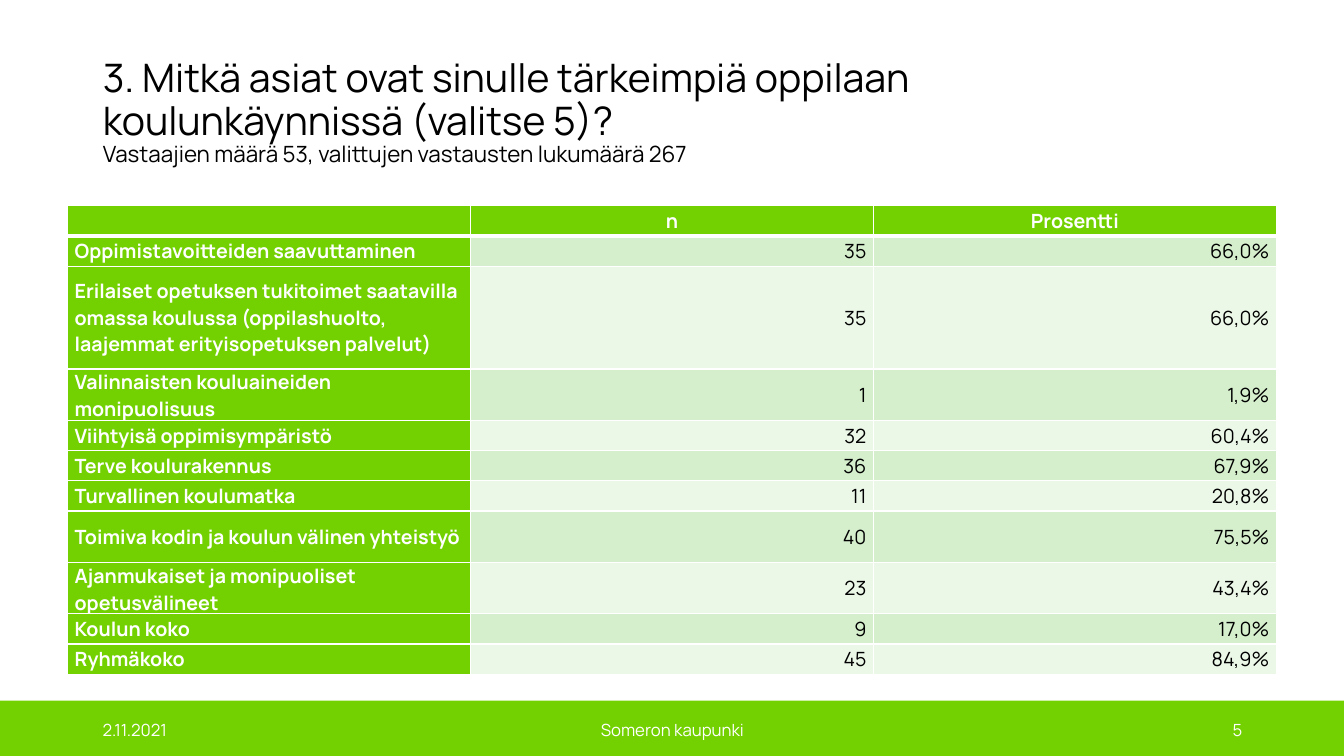
from lxml import etree
from pptx import Presentation
from pptx.dml.color import RGBColor
from pptx.enum import shapes, text
from pptx.oxml.ns import qn
from pptx.util import Inches, Pt

FONT = "Manrope"
GREEN = RGBColor(0x73, 0xD1, 0x01)
DARK_BAND = RGBColor(0xD5, 0xEE, 0xCC)
LIGHT_BAND = RGBColor(0xEB, 0xF7, 0xE7)
WHITE = RGBColor(0xFF, 0xFF, 0xFF)
BLACK = RGBColor(0, 0, 0)
LEFT, CENTER, RIGHT = text.PP_ALIGN.LEFT, text.PP_ALIGN.CENTER, text.PP_ALIGN.RIGHT

# Row height, label, count, share
ROWS = [
    (0.3, "", "n", "Prosentti"),
    (0.3, "Oppimistavoitteiden saavuttaminen", "35", "66,0%"),
    (1.02, "Erilaiset opetuksen tukitoimet saatavilla omassa koulussa "
           "(oppilashuolto, laajemmat erityisopetuksen palvelut)", "35", "66,0%"),
    (0.51, "Valinnaisten kouluaineiden monipuolisuus", "1", "1,9%"),
    (0.3, "Viihtyisä oppimisympäristö", "32", "60,4%"),
    (0.3, "Terve koulurakennus", "36", "67,9%"),
    (0.3, "Turvallinen koulumatka", "11", "20,8%"),
    (0.51, "Toimiva kodin ja koulun välinen yhteistyö", "40", "75,5%"),
    (0.51, "Ajanmukaiset ja monipuoliset opetusvälineet", "23", "43,4%"),
    (0.3, "Koulun koko", "9", "17,0%"),
    (0.3, "Ryhmäkoko", "45", "84,9%"),
]


def add_run(p, words, size, color, bold=False):
    r = p.add_run()
    r.text = words
    r.font.name, r.font.size, r.font.bold = FONT, Pt(size), bold
    r.font.color.rgb = color


def add_title(s):
    sp = s.shapes.title
    sp.left, sp.top, sp.width, sp.height = (Inches(v) for v in (0.92, 0.4, 9.9, 1.45))
    tf = sp.text_frame
    tf.word_wrap = True
    tf.auto_size = text.MSO_AUTO_SIZE.NONE
    tf.vertical_anchor = text.MSO_ANCHOR.MIDDLE
    p = tf.paragraphs[0]
    p.alignment, p.line_spacing = LEFT, 0.9
    add_run(p, "3. Mitkä asiat ovat sinulle tärkeimpiä oppilaan "
               "koulunkäynnissä (valitse 5)?", 28, BLACK)
    p.add_line_break()
    etree.SubElement(p._p[-1], qn("a:rPr"), sz="2800")
    add_run(p, "Vastaajien määrä 53, valittujen vastausten lukumäärä 267", 16, BLACK)


def add_footer_bar(s):
    sp = s.shapes.add_shape(shapes.MSO_SHAPE.RECTANGLE, 0, Inches(6.95),
                            Inches(13.33), Inches(0.55))
    sp.shadow.inherit = False
    sp.fill.solid()
    sp.fill.fore_color.rgb = GREEN
    sp.line.fill.background()


def add_footer_text(s, left, width, words, align):
    sp = s.shapes.add_textbox(Inches(left), Inches(7.04), Inches(width), Inches(0.4))
    tf = sp.text_frame
    tf.word_wrap = True
    tf.vertical_anchor = text.MSO_ANCHOR.MIDDLE
    p = tf.paragraphs[0]
    p.alignment = align
    add_run(p, words, 12, WHITE)


def set_borders(cell, top, bottom):
    """Draw white borders; top and bottom are widths in points."""
    tcPr = cell._tc.get_or_add_tcPr()
    for side, width in (("L", 1), ("R", 1), ("T", top), ("B", bottom)):
        ln = etree.SubElement(tcPr, qn(f"a:ln{side}"), w=str(Pt(width)))
        fill = etree.SubElement(ln, qn("a:solidFill"))
        etree.SubElement(fill, qn("a:srgbClr"), val=str(WHITE))


def fill_cell(cell, words, fill, color, bold, align):
    cell.margin_left = cell.margin_right = Inches(0.07)
    cell.margin_top = cell.margin_bottom = 0
    cell.vertical_anchor = text.MSO_ANCHOR.MIDDLE
    cell.fill.solid()
    cell.fill.fore_color.rgb = fill
    p = cell.text_frame.paragraphs[0]
    p.alignment = align
    if words:
        add_run(p, words, 14, color, bold)
    else:
        etree.SubElement(p._p, qn("a:endParaRPr"), sz="1400")


def add_answer_table(s):
    heights = [Inches(row[0]) for row in ROWS]
    table = s.shapes.add_table(len(ROWS), 3, Inches(0.67), Inches(2.04),
                               Inches(11.99), sum(heights)).table
    for i, (_, *words) in enumerate(ROWS):
        table.rows[i].height = heights[i]
        for j, word in enumerate(words):
            cell = table.cell(i, j)
            set_borders(cell, 3 if i == 1 else 1, 3 if i == 0 else 1)
            if i == 0:
                fill_cell(cell, word, GREEN, WHITE, True, CENTER)
            elif j == 0:
                fill_cell(cell, word, GREEN, WHITE, True, LEFT)
            else:
                band = DARK_BAND if i % 2 else LIGHT_BAND
                fill_cell(cell, word, band, BLACK, False, RIGHT)


def main():
    prs = Presentation()
    prs.slide_width, prs.slide_height = Inches(13.33), Inches(7.5)
    s = prs.slides.add_slide(prs.slide_layouts[5])
    add_footer_bar(s)
    add_footer_text(s, 0.92, 3, "2.11.2021", LEFT)
    add_footer_text(s, 4.42, 4.5, "Someron kaupunki", CENTER)
    add_footer_text(s, 9.42, 3, "5", RIGHT)
    add_title(s)
    add_answer_table(s)
    prs.save("out.pptx")


if __name__ == "__main__":
    main()
